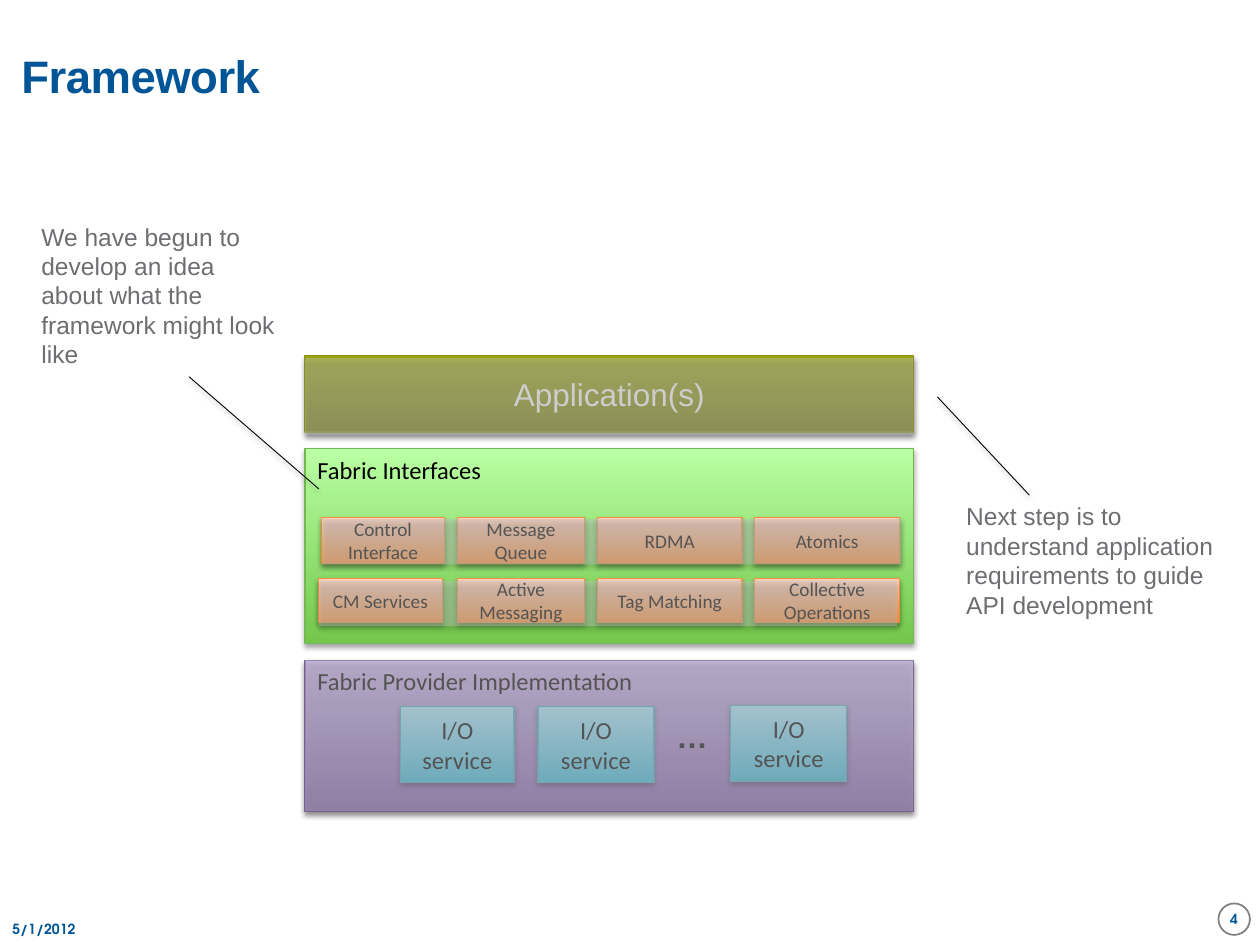
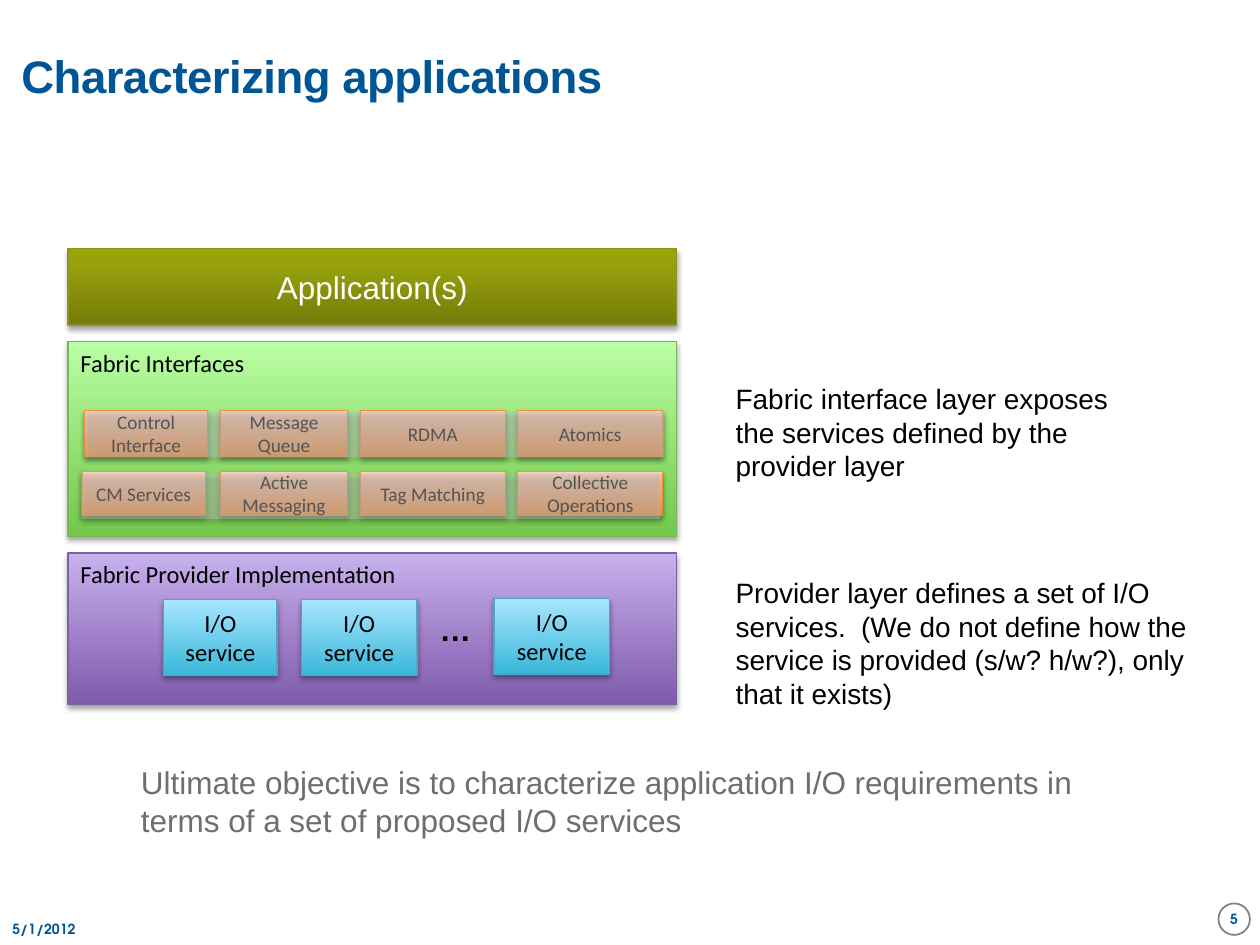
from lxml import etree
from pptx import Presentation, oxml
from pptx import util as u
from pptx.dml.color import RGBColor
from pptx.enum import shapes, text

A = "http://schemas.openxmlformats.org/drawingml/2006/main"

# Shared palette: gradients run from bottom to top as (percent, colour)
BLUE, GREY, BLACK, WHITE = "005596", "6D6E71", "000000", "FFFFFF"
APPLICATION = {"stops": [(0, "757C09"), (80, "98A10C"), (100, "9BA409")], "edge": "8C941A"}
INTERFACES = {"stops": [(0, "73C74B"), (100, "BAFFA4")], "edge": "75B755"}
PROVIDER = {"stops": [(0, "7F5BAB"), (100, "C8B0ED")], "edge": "7D60A0"}
IO_SERVICE = {"stops": [(0, "39B7D8"), (100, "A7E6FF")], "edge": "46AAC5"}
API = {"stops": [(0, "FF953E"), (100, "FFD2BD")], "edge": "F69240"}

# Shared text formats
TITLE = {"size": 26, "name": "Arial", "color": BLUE, "bold": True}
FOOTER = {"size": 8, "name": "TeX Gyre Adventor", "color": BLUE, "bold": True}
LAYER = {"size": 14, "name": "Calibri", "color": BLACK}
API_LABEL = {**LAYER, "size": 11}
APP_LABEL = {"size": 18, "name": "Arial", "color": WHITE}
DOTS = {"size": 18, "name": "Arial", "color": BLACK, "bold": True}
CALLOUT = {"size": 14, "name": "Arial", "color": GREY}
REMARK = {"size": 16, "name": "Arial", "color": BLACK}
OBJECTIVE = {**CALLOUT, "size": 18}

# Stack of layers, measured from its top left corner
STACK_WIDTH = 4.83
API_WIDTHS = [0.98, 1.01, 1.15, 1.15]
API_GAP = 0.1
API_ROWS = [  # left of first box, top, height, labels
    (0.13, 1.29, 0.36, ["Control\nInterface", "Message Queue", "RDMA", "Atomics"]),
    (0.11, 1.77, 0.35, ["CM Services", "Active Messaging", "Tag Matching",
                        "Collective Operations"]),
]
API_VEILS = [(0.14, 1.3), (0.11, 1.79)]
IO_BOXES = [(0.76, 2.79, 0.9), (1.85, 2.79, 0.92), (3.38, 2.78, 0.92)]


def color(hex_value):
    return RGBColor.from_string(hex_value)


def inches(*lengths):
    return [u.Inches(length) for length in lengths]


def write(frame, words, style, center=False, middle=False, margin=None):
    """Fill a text frame; each line of words becomes a paragraph."""
    frame.word_wrap = True
    frame.vertical_anchor = text.MSO_ANCHOR.MIDDLE if middle else text.MSO_ANCHOR.TOP
    if margin is not None:
        for side in ("left", "top", "right", "bottom"):
            setattr(frame, f"margin_{side}", u.Inches(margin))
    for index, line in enumerate(words.split("\n")):
        paragraph = frame.add_paragraph() if index else frame.paragraphs[0]
        paragraph.alignment = text.PP_ALIGN.CENTER if center else text.PP_ALIGN.LEFT
        font = paragraph.add_run()
        font.text = line
        for key, value in style.items():
            if key == "color":
                font.font.color.rgb = color(value)
            else:
                setattr(font.font, key, u.Pt(value) if key == "size" else value)


def add_text(slide, box, words, style, **layout):
    label = slide.shapes.add_textbox(*inches(*box))
    write(label.text_frame, words, style, **layout)
    return label.text_frame


def cast_shadow(element, alpha=35, distance=1.8):
    """Add a soft shadow straight below a shape or connector."""
    element.spPr.append(oxml.parse_xml(
        f'<a:effectLst xmlns:a="{A}"><a:outerShdw blurRad="{u.Pt(3.1)}" '
        f'dist="{u.Pt(distance)}" dir="5400000" rotWithShape="0">'
        f'<a:srgbClr val="{BLACK}"><a:alpha val="{alpha * 1000}"/></a:srgbClr>'
        f'</a:outerShdw></a:effectLst>'))


def add_block(slide, box, look, words, style, **layout):
    """Add a gradient rectangle with an edge, a shadow and text."""
    block = slide.shapes.add_shape(shapes.MSO_SHAPE.RECTANGLE, *inches(*box))
    stops = "".join(f'<a:gs pos="{percent * 1000}"><a:srgbClr val="{tone}"/></a:gs>'
                    for percent, tone in look["stops"])
    geometry = block._element.spPr[1]
    geometry.addnext(oxml.parse_xml(
        f'<a:gradFill xmlns:a="{A}" rotWithShape="1"><a:gsLst>{stops}</a:gsLst>'
        f'<a:lin ang="16200000" scaled="0"/></a:gradFill>'))
    block.line.color.rgb = color(look["edge"])
    block.line.width = u.Pt(0.75)
    cast_shadow(block._element)
    write(block.text_frame, words, style, **layout)


def add_veil(slide, *box):
    """Dim what lies below with a translucent grey rectangle."""
    veil = slide.shapes.add_shape(shapes.MSO_SHAPE.RECTANGLE, *inches(*box))
    veil.fill.solid()
    veil.fill.fore_color.rgb = color("C0C0C0")
    tone = veil._element.spPr.find(f"{{{A}}}solidFill")[0]
    etree.SubElement(tone, f"{{{A}}}alpha", val="44000")
    veil.line.fill.background()
    cast_shadow(veil._element)


def add_pointer(slide, *ends):
    pointer = slide.shapes.add_connector(shapes.MSO_CONNECTOR.STRAIGHT, *inches(*ends))
    pointer.line.color.rgb = color(BLACK)
    pointer.line.width = u.Pt(0.5)
    cast_shadow(pointer._element, alpha=38, distance=1.6)


def add_page(deck, title, number):
    """Start a slide with its title, date and page number."""
    slide = deck.slides.add_slide(deck.slide_layouts[6])
    heading = add_text(slide, (0.17, 0.17, 8, 0.92), title, TITLE, middle=True, margin=0)
    heading.paragraphs[0].line_spacing = 0.85
    heading.paragraphs[0].runs[0]._r.get_or_add_rPr().set("spc", "-30")
    add_text(slide, (0, 7.25, 2.33, 0.25), "5/1/2012", FOOTER, middle=True)
    badge = slide.shapes.add_shape(shapes.MSO_SHAPE.OVAL, *inches(9.67, 7.17, 0.25, 0.25))
    badge.shadow.inherit = False
    badge.fill.solid()
    badge.fill.fore_color.rgb = color(WHITE)
    badge.line.color.rgb = color("808080")
    badge.line.width = u.Pt(1)
    write(badge.text_frame, str(number), FOOTER, center=True, middle=True, margin=0)
    return slide


def add_stack(slide, left, top, dimmed=False):
    """Draw application, interface and provider layers with their services."""
    centered = {"center": True, "middle": True}
    # Layers
    add_block(slide, (left, top + 0.74, STACK_WIDTH, 1.55), INTERFACES,
              "Fabric Interfaces", LAYER)
    add_block(slide, (left, top + 2.42, STACK_WIDTH, 1.2), PROVIDER,
              "Fabric Provider Implementation", LAYER)
    for x, y, width in IO_BOXES:
        add_block(slide, (left + x, top + y, width, 0.6), IO_SERVICE,
                  "I/O service", LAYER, **centered)
    dots = add_text(slide, (left + 2.85, top + 2.82, 0.45, 0.4), "…", DOTS)
    dots.word_wrap = False
    add_block(slide, (left, top, STACK_WIDTH, 0.61), APPLICATION,
              "Application(s)", APP_LABEL, **centered)
    if dimmed:
        add_veil(slide, left, top + 0.02, STACK_WIDTH, 0.61)
        add_veil(slide, left, top + 2.42, STACK_WIDTH, 1.2)
    # Interface groups
    for first, y, height, labels in API_ROWS:
        for column, (label, width) in enumerate(zip(labels, API_WIDTHS)):
            x = API_ROWS[0][0] + sum(API_WIDTHS[:column]) + API_GAP * column
            x = x if column else first
            add_block(slide, (left + x, top + y, width, height), API,
                      label, API_LABEL, **centered)
    for x, y in API_VEILS:
        add_veil(slide, left + x, top + y, 4.59, 0.36)


def main():
    deck = Presentation()
    deck.slide_width, deck.slide_height = inches(10, 7.5)

    # Framework
    framework = add_page(deck, "Framework", 4)
    add_stack(framework, 2.42, 2.82, dimmed=True)
    add_text(framework, (0.23, 1.71, 2.05, 1.28),
             "We have begun to develop an idea about what the framework might look like",
             CALLOUT)
    add_pointer(framework, 1.5, 2.99, 2.53, 3.88)
    add_text(framework, (7.57, 3.93, 2.22, 1.04),
             "Next step is to understand application requirements to guide API development",
             CALLOUT)
    add_pointer(framework, 8.17, 3.93, 7.44, 3.15)

    # Characterizing applications
    applications = add_page(deck, "Characterizing applications", 5)
    add_stack(applications, 0.54, 1.97)
    add_text(applications, (5.74, 4.52, 3.78, 1.18),
             "Provider layer defines a set of I/O services.  (We do not define how the "
             "service is provided (s/w? h/w?), only that it exists)", REMARK)
    add_text(applications, (5.74, 2.98, 3.51, 0.91),
             "Fabric interface layer exposes the services defined by the provider layer",
             REMARK)
    add_text(applications, (1.02, 6.01, 8.23, 0.71),
             "Ultimate objective is to characterize application I/O requirements in terms "
             "of a set of proposed I/O services", OBJECTIVE)

    deck.save("out.pptx")


if __name__ == "__main__":
    main()
